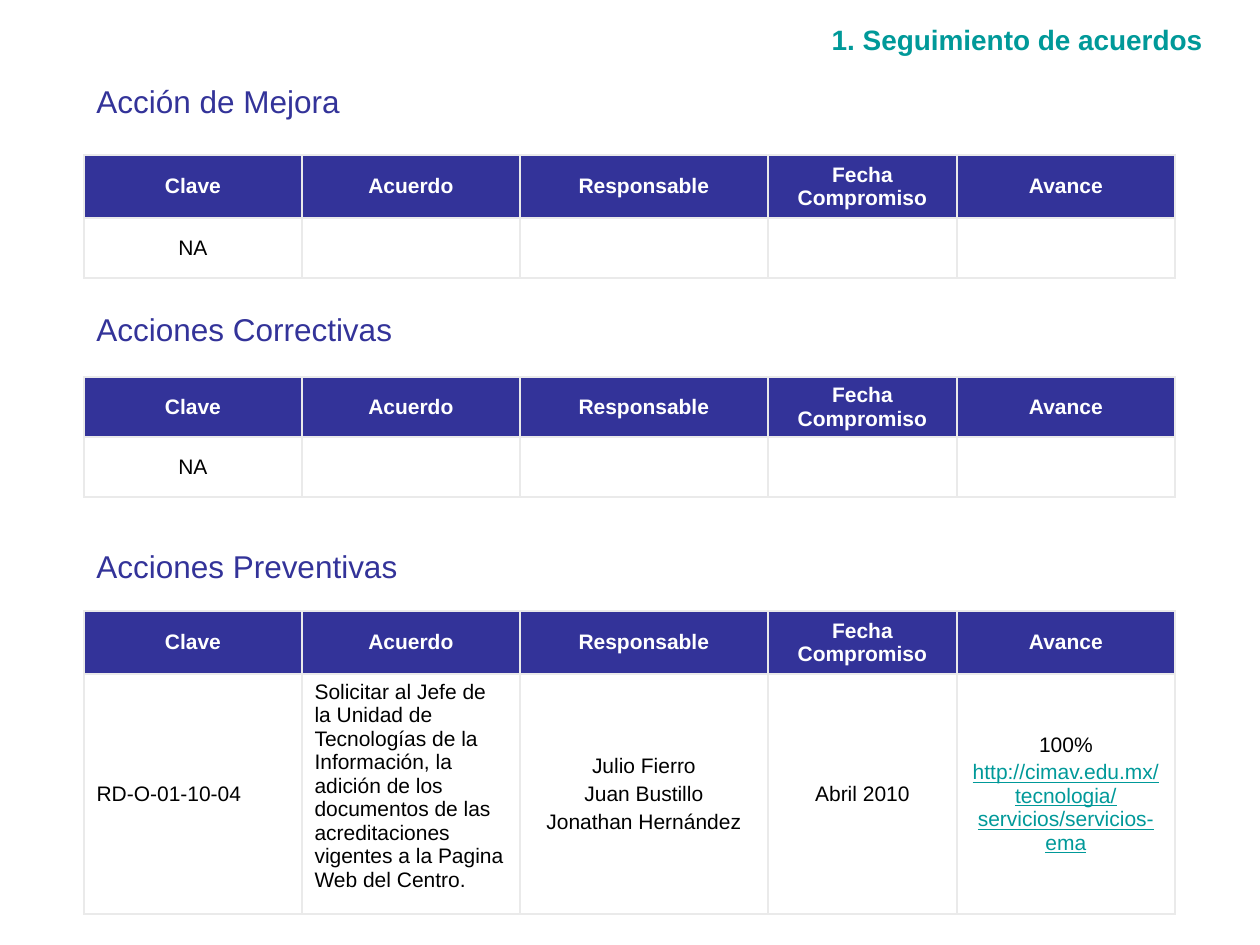
from lxml.etree import SubElement
from pptx import Presentation
from pptx.dml.color import RGBColor
from pptx.enum.text import MSO_ANCHOR, MSO_AUTO_SIZE, PP_ALIGN
from pptx.oxml.ns import qn
from pptx.util import Emu, Pt

FONT = "Arial"
NAVY = RGBColor(0x33, 0x33, 0x99)
TEAL = RGBColor(0x00, 0x99, 0x99)
WHITE = RGBColor(0xFF, 0xFF, 0xFF)
BLACK = RGBColor(0x00, 0x00, 0x00)
BORDER = RGBColor(0xEA, 0xEA, 0xEA)

LEFT = 84
COLUMNS = [218, 218, 248, 189, 218]
HEADERS = ["Clave", "Acuerdo", "Responsable", "Fecha Compromiso", "Avance"]
NOT_APPLICABLE = [["NA"], [], [], [], []]
PREVENTIVE = [
    ["RD-O-01-10-04"],
    ["Solicitar al Jefe de la Unidad de Tecnologías de la Información, "
     "la adición de los documentos de las acreditaciones vigentes a la "
     "Pagina Web del Centro."],
    ["Julio Fierro", "Juan Bustillo", "Jonathan Hernández"],
    ["Abril 2010"],
    ["100%", "http://cimav.edu.mx/tecnologia/servicios/servicios-ema"],
]
# Heading, its top and width, table top, row heights, body row
SECTIONS = [
    ("Acción de Mejora", 76, 285, 155, [63, 60], NOT_APPLICABLE),
    ("Acciones Correctivas", 304, 335, 377, [60, 60], NOT_APPLICABLE),
    ("Acciones Preventivas", 541, 340, 611, [63, 240], PREVENTIVE),
]


def px(length):
    return Emu(round(length * 914400 / 126))


def add_run(paragraph, text, size, color, bold=False, underline=False):
    run = paragraph.add_run()
    run.text = text
    font = run.font
    font.name, font.size = FONT, Pt(size)
    font.bold, font.underline = bold, underline
    font.color.rgb = color


def add_label(slide, text, left, top, width, height, size, color,
              bold=False, align=PP_ALIGN.LEFT):
    box = slide.shapes.add_textbox(px(left), px(top), px(width), px(height))
    frame = box.text_frame
    frame.word_wrap = True
    frame.auto_size = MSO_AUTO_SIZE.SHAPE_TO_FIT_TEXT
    paragraph = frame.paragraphs[0]
    paragraph.alignment = align
    add_run(paragraph, text, size, color, bold)


def set_borders(cell):
    properties = cell._tc.get_or_add_tcPr()
    for side in ("a:lnL", "a:lnR", "a:lnT", "a:lnB"):
        line = SubElement(properties, qn(side), w=str(Pt(1)))
        fill = SubElement(line, qn("a:solidFill"))
        SubElement(fill, qn("a:srgbClr"), val=str(BORDER))


def fill_cell(cell, lines, header, align, anchor):
    set_borders(cell)
    if header:
        cell.fill.solid()
        cell.fill.fore_color.rgb = NAVY
        # Two header lines must fit the lowest header row
        cell.margin_top = cell.margin_bottom = px(4)
    else:
        cell.fill.background()
    cell.vertical_anchor = anchor
    frame = cell.text_frame
    for index, text in enumerate(lines):
        paragraph = frame.add_paragraph() if index else frame.paragraphs[0]
        paragraph.alignment = align
        if index:
            paragraph.space_before = Pt(2.4)
        link = text.startswith("http")
        color = WHITE if header else TEAL if link else BLACK
        add_run(paragraph, text, 12, color, header, link)


def add_agreement_table(slide, top, heights, body):
    frame = slide.shapes.add_table(2, len(COLUMNS), px(LEFT), px(top),
                                   px(sum(COLUMNS)), px(sum(heights)))
    table = frame.table
    table.first_row = table.horz_banding = False
    for column, width in zip(table.columns, COLUMNS):
        column.width = px(width)
    for row, height in zip(table.rows, heights):
        row.height = px(height)
    for index, (title, lines) in enumerate(zip(HEADERS, body)):
        fill_cell(table.cell(0, index), [title], True,
                  PP_ALIGN.CENTER, MSO_ANCHOR.MIDDLE)
        # Key and agreement read from the left when they hold real entries
        left_aligned = body is PREVENTIVE and index < 2
        align = PP_ALIGN.LEFT if left_aligned else PP_ALIGN.CENTER
        top_aligned = body is PREVENTIVE and index == 1
        anchor = MSO_ANCHOR.TOP if top_aligned else MSO_ANCHOR.MIDDLE
        fill_cell(table.cell(1, index), lines, False, align, anchor)


def main():
    presentation = Presentation()
    presentation.slide_width, presentation.slide_height = px(1260), px(945)
    slide = presentation.slides.add_slide(presentation.slide_layouts[6])

    # Slide title
    add_label(slide, "1. Seguimiento de acuerdos", 669, 16, 546, 47, 16, TEAL,
              bold=True, align=PP_ALIGN.RIGHT)

    # Headings with their tables
    for heading, top, width, table_top, heights, body in SECTIONS:
        add_label(slide, heading, LEFT, top, width, 50, 18, NAVY)
        add_agreement_table(slide, table_top, heights, body)

    presentation.save("out.pptx")


if __name__ == "__main__":
    main()
